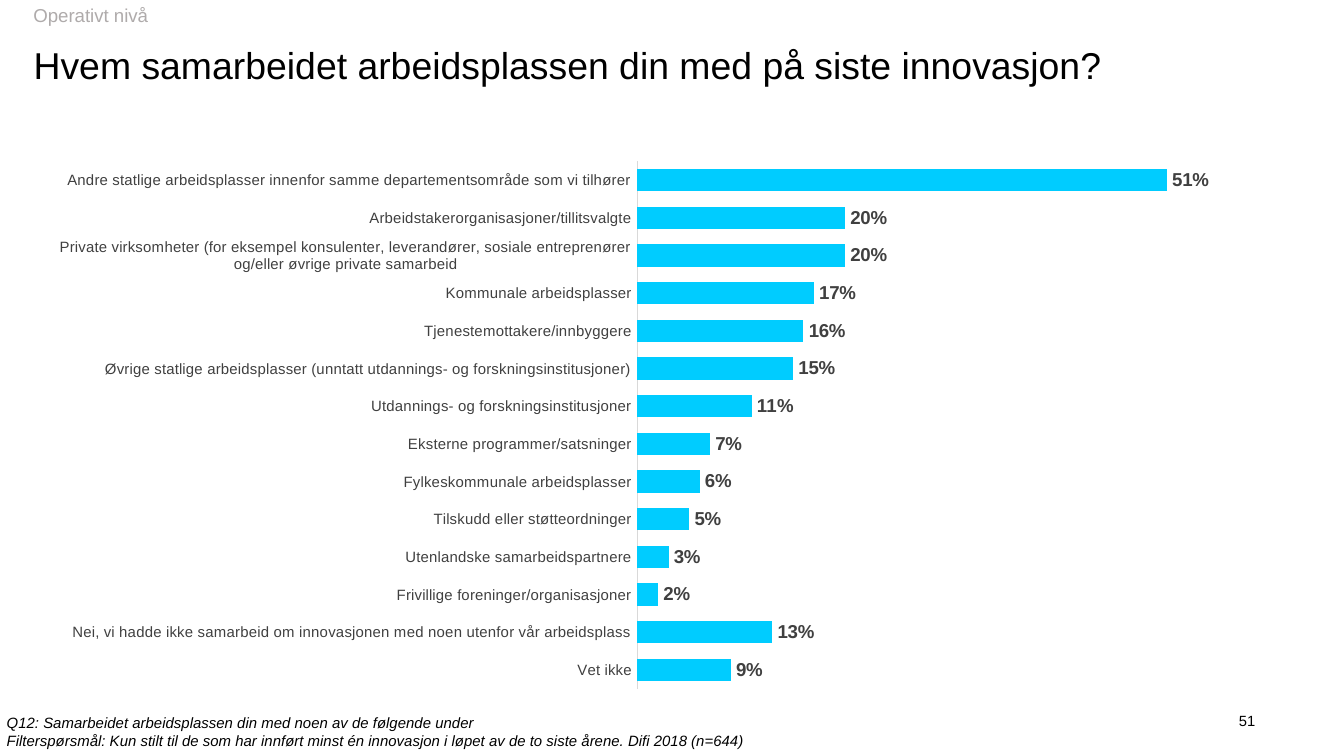
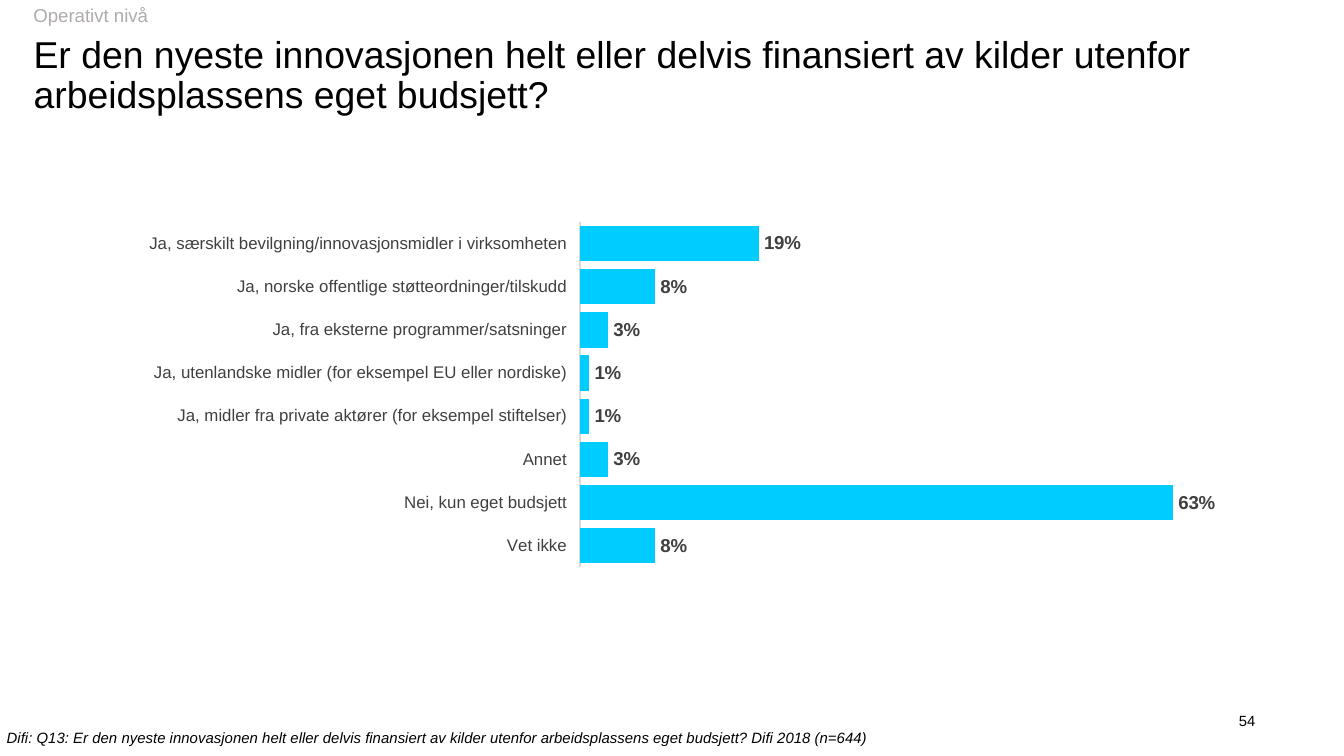
from dataclasses import dataclass

from lxml import etree
from pptx import Presentation
from pptx.chart.data import CategoryChartData
from pptx.dml.color import RGBColor
from pptx.enum.chart import XL_CHART_TYPE, XL_LABEL_POSITION, XL_TICK_LABEL_POSITION, XL_TICK_MARK
from pptx.enum.text import MSO_ANCHOR, MSO_AUTO_SIZE, PP_ALIGN
from pptx.oxml.ns import qn
from pptx.util import Inches, Pt

BAR = XL_CHART_TYPE.BAR_CLUSTERED
OUTSIDE_END = XL_LABEL_POSITION.OUTSIDE_END
LABELS_LOW = XL_TICK_LABEL_POSITION.LOW
LABELS_NEXT = XL_TICK_LABEL_POSITION.NEXT_TO_AXIS
NO_TICK = XL_TICK_MARK.NONE
TOP, MIDDLE, BOTTOM = MSO_ANCHOR.TOP, MSO_ANCHOR.MIDDLE, MSO_ANCHOR.BOTTOM
LEFT, RIGHT = PP_ALIGN.LEFT, PP_ALIGN.RIGHT
FIT_SHAPE = MSO_AUTO_SIZE.SHAPE_TO_FIT_TEXT


@dataclass(frozen=True)
class Theme:
    font: str = "Arial"
    black: str = "000000"
    kicker: str = "AFABAB"
    label: str = "404040"
    axis: str = "D9D9D9"
    bar: str = "00CCFF"
    title_size: float = 20
    kicker_size: float = 10
    value_size: float = 10
    source_size: float = 8
    number_size: float = 7.9
    axis_width: float = 0.75
    line_spacing: float = 0.9
    source_indent: float = 0.01


THEME = Theme()
SLIDE_WIDTH = 10
SLIDE_HEIGHT = SLIDE_WIDTH * 9 / 16
KICKER = "Operativt nivå"
KICKER_BOX = (0.15, 0, 1.24, 0.26)
NUMBER_BOX = (9.09, 5.29, 0.25, 0.15)

SLIDES = [
    {
        "title": "Hvem samarbeidet arbeidsplassen din med på siste innovasjon?",
        "title_box": (0.25, 0.26, 9.33, 0.39),
        "number": "51",
        "source": [
            "Q12: Samarbeidet arbeidsplassen din med noen av de følgende under",
            "Filterspørsmål: Kun stilt til de som har innført minst én innovasjon i løpet av de to siste årene. Difi 2018 (n=644)",
        ],
        "source_box": (0.04, 5.31, 5.56, 0.27),
        "chart_box": (0.24, 1.05, 9.46, 4.43),
        "plot": {"x": 0.476, "y": 0.034, "w": 0.49, "h": 0.886},
        "gap": 70,
        "maximum": 0.6,
        "label_size": 8,
        "label_position": LABELS_NEXT,
        "reverse": False,
        "answers": [
            ("Vet ikke", 0.09),
            ("Nei, vi hadde ikke samarbeid om innovasjonen med noen utenfor vår arbeidsplass", 0.13),
            ("Frivillige foreninger/organisasjoner", 0.02),
            ("Utenlandske samarbeidspartnere", 0.03),
            ("Tilskudd eller støtteordninger", 0.05),
            ("Fylkeskommunale arbeidsplasser", 0.06),
            ("Eksterne programmer/satsninger", 0.07),
            ("Utdannings- og forskningsinstitusjoner", 0.11),
            ("Øvrige statlige arbeidsplasser (unntatt utdannings- og forskningsinstitusjoner)", 0.15),
            ("Tjenestemottakere/innbyggere", 0.16),
            ("Kommunale arbeidsplasser", 0.17),
            ("Private virksomheter (for eksempel konsulenter, leverandører, sosiale entreprenører og/eller øvrige private samarbeid", 0.2),
            ("Arbeidstakerorganisasjoner/tillitsvalgte", 0.2),
            ("Andre statlige arbeidsplasser innenfor samme departementsområde som vi tilhører", 0.51),
        ],
    },
    {
        "title": "Er den nyeste innovasjonen helt eller delvis finansiert av kilder utenfor arbeidsplassens eget budsjett?",
        "title_box": (0.25, 0.39, 9.67, 0.48),
        "number": "54",
        "source": [
            "Difi: Q13: Er den nyeste innovasjonen helt eller delvis finansiert av kilder utenfor arbeidsplassens eget budsjett? Difi 2018 (n=644)",
        ],
        "source_box": (0.04, 5.42, 6.49, 0.13),
        "chart_box": (0.17, 1.59, 9.05, 3.27),
        "plot": {"x": 0.458, "y": 0.019, "w": 0.542, "h": 0.786},
        "gap": 22,
        "maximum": 0.7,
        "label_size": 9,
        "label_position": LABELS_LOW,
        "reverse": True,
        "answers": [
            ("Ja, særskilt bevilgning/innovasjonsmidler i virksomheten", 0.19),
            ("Ja, norske offentlige støtteordninger/tilskudd", 0.08),
            ("Ja, fra eksterne programmer/satsninger", 0.03),
            ("Ja, utenlandske midler (for eksempel EU eller nordiske)", 0.01),
            ("Ja, midler fra private aktører (for eksempel stiftelser)", 0.01),
            ("Annet", 0.03),
            ("Nei, kun eget budsjett", 0.63),
            ("Vet ikke", 0.08),
        ],
    },
]


def style_font(font, size, color, bold=False, italic=False):
    font.name = THEME.font
    font.size = Pt(size)
    font.bold = bold
    font.italic = italic
    font.color.rgb = RGBColor.from_string(color)


def add_text(s, box, lines, size, color=THEME.black, anchor=TOP, align=LEFT,
             spacing=None, italic=False, inset=True, wrap=True, indent=0):
    tf = s.shapes.add_textbox(*map(Inches, box)).text_frame
    tf.word_wrap = wrap
    tf.vertical_anchor = anchor
    if not wrap:
        tf.auto_size = FIT_SHAPE
    if not inset:
        tf.margin_left = tf.margin_top = tf.margin_right = tf.margin_bottom = 0
    for i, line in enumerate(lines):
        p = tf.add_paragraph() if i else tf.paragraphs[0]
        p.alignment = align
        p.line_spacing = spacing
        if indent:
            p._p.get_or_add_pPr().set("marL", str(Inches(indent)))
        r = p.add_run()
        r.text = line
        style_font(r.font, size, color, italic=italic)


def set_plot_layout(chart, plot):
    area = chart.element.find(".//" + qn("c:plotArea"))
    for old in area.findall(qn("c:layout")):
        area.remove(old)
    layout = etree.Element(qn("c:layout"))
    manual = etree.SubElement(layout, qn("c:manualLayout"))
    settings = {"layoutTarget": "inner", "xMode": "edge", "yMode": "edge", **plot}
    for name, value in settings.items():
        etree.SubElement(manual, qn("c:" + name)).set("val", str(value))
    area.insert(0, layout)


def add_answers_chart(s, content):
    data = CategoryChartData(number_format="0%")
    data.categories = [name for name, share in content["answers"]]
    data.add_series("Series 1", [share for name, share in content["answers"]])
    chart = s.shapes.add_chart(BAR, *map(Inches, content["chart_box"]), data).chart
    chart.has_legend = False
    chart.has_title = False
    style_font(chart.font, THEME.value_size, THEME.black)
    set_plot_layout(chart, content["plot"])

    axis = chart.category_axis
    axis.major_tick_mark = axis.minor_tick_mark = NO_TICK
    axis.reverse_order = content["reverse"]
    axis.tick_label_position = content["label_position"]
    axis.format.line.color.rgb = RGBColor.from_string(THEME.axis)
    axis.format.line.width = Pt(THEME.axis_width)
    style_font(axis.tick_labels.font, content["label_size"], THEME.label)

    values = chart.value_axis
    values.visible = False
    values.has_major_gridlines = False
    values.minimum_scale = 0
    values.maximum_scale = content["maximum"]
    values.tick_labels.number_format = "0%"
    values.tick_labels.number_format_is_linked = False

    plot = chart.plots[0]
    plot.gap_width = content["gap"]
    plot.vary_by_categories = False
    bars = plot.series[0]
    bars.format.fill.solid()
    bars.format.fill.fore_color.rgb = RGBColor.from_string(THEME.bar)
    labels = bars.data_labels
    labels.show_value = True
    labels.number_format = "0%"
    labels.number_format_is_linked = False
    labels.position = OUTSIDE_END
    style_font(labels.font, THEME.value_size, THEME.label, bold=True)


def add_slide(prs, content):
    s = prs.slides.add_slide(prs.slide_layouts[6])
    add_text(s, content["title_box"], [content["title"]], THEME.title_size,
             anchor=BOTTOM, spacing=THEME.line_spacing, inset=False)
    add_answers_chart(s, content)
    add_text(s, content["source_box"], content["source"], THEME.source_size,
             italic=True, inset=False, wrap=False, indent=THEME.source_indent)
    add_text(s, NUMBER_BOX, [content["number"]], THEME.number_size,
             anchor=MIDDLE, align=RIGHT, inset=False)
    add_text(s, KICKER_BOX, [KICKER], THEME.kicker_size, THEME.kicker,
             spacing=THEME.line_spacing)


def main():
    prs = Presentation()
    prs.slide_width = Inches(SLIDE_WIDTH)
    prs.slide_height = Inches(SLIDE_HEIGHT)
    for content in SLIDES:
        add_slide(prs, content)
    prs.save("out.pptx")


if __name__ == "__main__":
    main()
